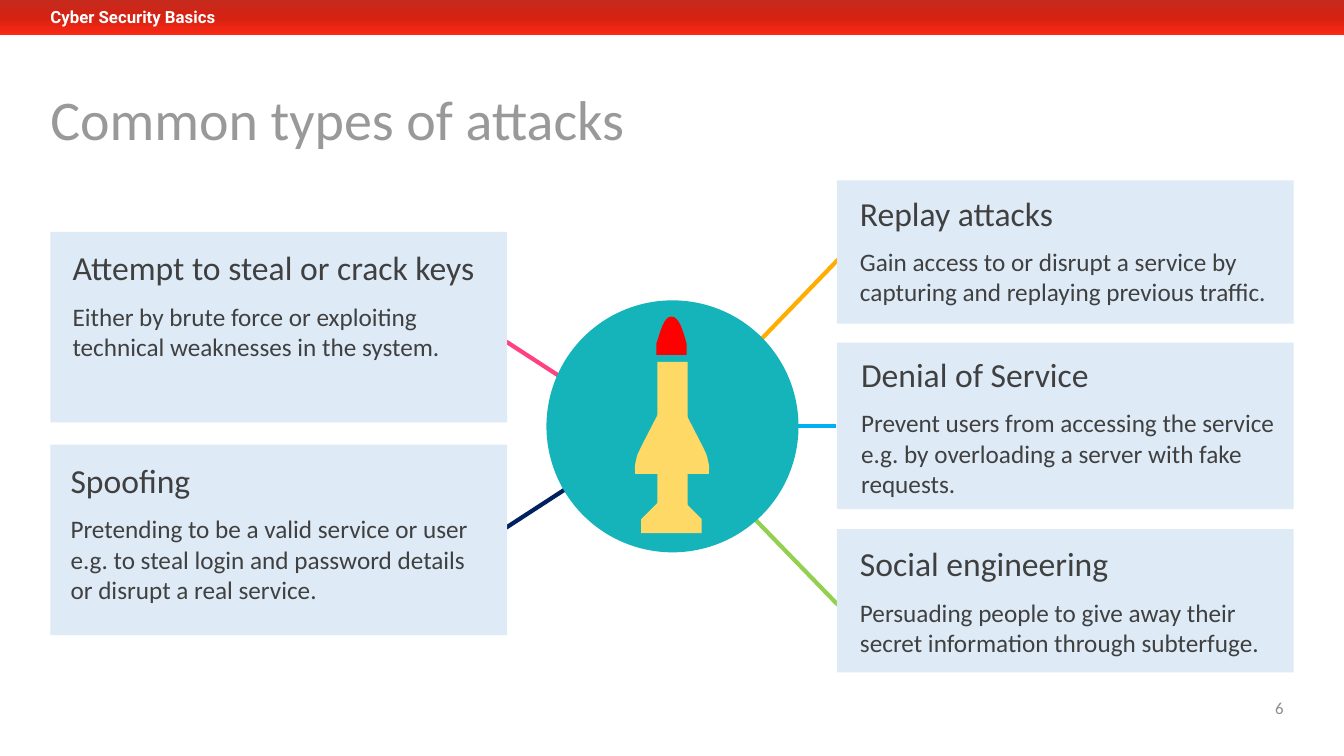
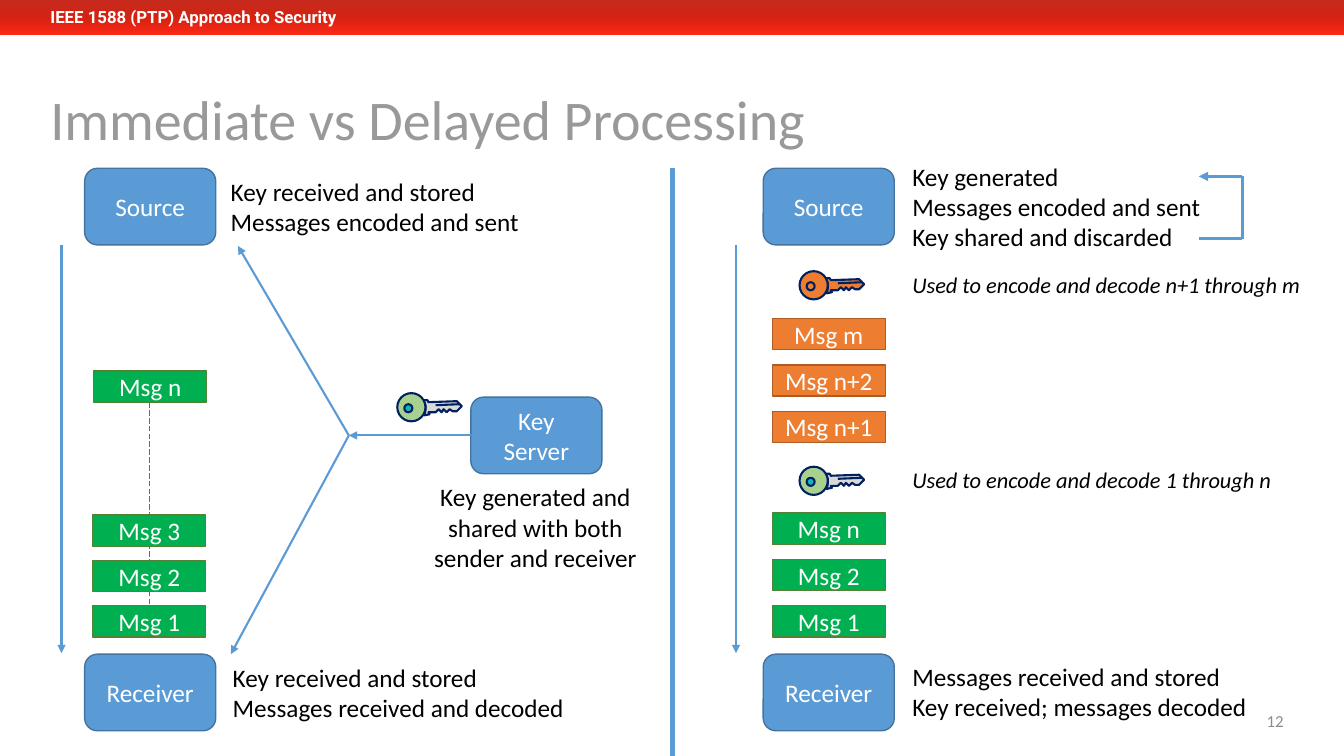
from copy import deepcopy
from dataclasses import dataclass
from typing import NamedTuple, Optional, Sequence

from lxml import etree
from pptx import Presentation
from pptx import util as u
from pptx.dml import color
from pptx.enum import dml, shapes, text
from pptx.oxml import ns

Point = tuple[float, float]


@dataclass(frozen=True)
class Theme:
    font: str = "Calibri"
    band_font: str = "Roboto"
    band: tuple = ("C52A1D", "D52212", "FD2815")
    title: str = "999999"
    number: str = "8C8C8C"
    white: str = "FFFFFF"
    black: str = "000000"
    card: str = "DEEBF7"
    card_text: str = "404040"
    teal: str = "15B4BA"
    nose: str = "FF0000"
    rocket: str = "FFD966"
    blue: str = "5B9BD5"
    blue_edge: str = "43739E"
    green: str = "00B050"
    green_edge: str = "548235"
    orange: str = "ED7D31"
    orange_edge: str = "AF5C24"
    navy: str = "002060"
    key_green: str = "A9D18E"
    key_grey: str = "D9D9D9"
    title_size: float = 40
    heading_size: float = 24
    body_size: float = 18
    note_size: float = 16
    small_size: float = 12
    heading_gap: float = 9.8


T = Theme()


class Box(NamedTuple):
    left: float
    top: float
    width: float
    height: float

    def emu(self) -> list:
        return [u.Inches(v) for v in self]


class Style(NamedTuple):
    size: float = T.body_size
    color: str = T.black
    font: str = T.font
    bold: bool = False
    italic: bool = False
    align: text.PP_ALIGN = text.PP_ALIGN.LEFT
    anchor: text.MSO_ANCHOR = text.MSO_ANCHOR.TOP
    insets: tuple = (0.1, 0.05, 0.1, 0.05)


class Card(NamedTuple):
    box: Box
    text_box: Box
    heading: str
    body: str


class Spoke(NamedTuple):
    start: Point
    end: Point
    color: str


class Message(NamedTuple):
    left: float
    top: float
    label: str
    fill: str
    edge: str


class Key(NamedTuple):
    center: Point
    bow: str
    blade: str
    eye: str


LABEL = Style(color=T.white, align=text.PP_ALIGN.CENTER, anchor=text.MSO_ANCHOR.MIDDLE)
CARD_BODY = Style(color=T.card_text, insets=(0.2, 0.05, 0.04, 0.05))
CARD_HEADING = CARD_BODY._replace(size=T.heading_size)
TITLE = Style(T.title_size, T.title, anchor=text.MSO_ANCHOR.MIDDLE, insets=(0, 0, 0, 0))
SECTION = Style(T.small_size, T.white, T.band_font, bold=True, insets=(0, 0.05, 0.1, 0.05))
NUMBER = Style(T.small_size, T.number, align=text.PP_ALIGN.RIGHT, anchor=text.MSO_ANCHOR.MIDDLE)
NOTE = Style(T.note_size, italic=True)


def rgb(value: str) -> color.RGBColor:
    return color.RGBColor.from_string(value)


def write(shape, lines: Sequence[str], *styles: Style) -> None:
    frame = shape.text_frame
    frame.text = "\n".join(lines)
    frame.word_wrap = True
    frame.vertical_anchor = styles[0].anchor
    frame.margin_left, frame.margin_top, frame.margin_right, frame.margin_bottom = (
        u.Inches(v) for v in styles[0].insets)
    for i, paragraph in enumerate(frame.paragraphs):
        style = styles[min(i, len(styles) - 1)]
        paragraph.alignment = style.align
        for run in paragraph.runs:
            font = run.font
            font.name, font.size = style.font, u.Pt(style.size)
            font.bold, font.italic = style.bold, style.italic
            font.color.rgb = rgb(style.color)


def add_text(slide, box: Box, lines: Sequence[str], *styles: Style):
    caption = slide.shapes.add_textbox(*box.emu())
    write(caption, lines, *styles)
    return caption


def paint(shape, fill: Optional[str], edge: Optional[str] = None, weight: float = 1) -> None:
    shape.shadow.inherit = False
    if fill:
        shape.fill.solid()
        shape.fill.fore_color.rgb = rgb(fill)
    else:
        shape.fill.background()
    if edge:
        shape.line.color.rgb = rgb(edge)
        shape.line.width = u.Pt(weight)
    else:
        shape.line.fill.background()


def add_block(slide, kind, box: Box, fill: str, edge: Optional[str] = None,
              weight: float = 1, label: str = ""):
    block = slide.shapes.add_shape(kind, *box.emu())
    paint(block, fill, edge, weight)
    if label:
        write(block, [label], LABEL)
    return block


def add_outline(slide, points: Sequence[Point], fill: Optional[str],
                edge: Optional[str] = None, weight: float = 1) -> None:
    corners = [(u.Inches(x), u.Inches(y)) for x, y in points]
    builder = slide.shapes.build_freeform(*corners[0])
    builder.add_line_segments(corners[1:], close=True)
    paint(builder.convert_to_shape(), fill, edge, weight)


def add_line(slide, start: Point, end: Point, stroke: str, weight: float,
             arrow: bool = False, dashed: bool = False) -> None:
    line = slide.shapes.add_connector(
        shapes.MSO_CONNECTOR.STRAIGHT, *(u.Inches(v) for v in (*start, *end)))
    line.line.color.rgb = rgb(stroke)
    line.line.width = u.Pt(weight)
    if dashed:
        line.line.dash_style = dml.MSO_LINE.LONG_DASH
    if arrow:
        etree.SubElement(line.line._get_or_add_ln(), ns.qn("a:tailEnd"), type="triangle")
    etree.SubElement(line._element.spPr, ns.qn("a:effectLst"))


def add_frame(deck, section: str, title: str, number: str, number_top: float):
    slide = deck.slides.add_slide(deck.slide_layouts[6])
    band = slide.shapes.add_shape(shapes.MSO_SHAPE.RECTANGLE, *Box(0, 0, 13.34, 0.35).emu())
    band.shadow.inherit = False
    band.line.fill.background()
    band.fill.gradient()
    band.fill.gradient_angle = 270
    stops = band._element.spPr.find(".//" + ns.qn("a:gsLst"))
    stops.insert(1, deepcopy(stops[0]))
    for i, (stop, shade) in enumerate(zip(band.fill.gradient_stops, T.band)):
        stop.position = i / 2
        stop.color.rgb = rgb(shade)
    add_text(slide, Box(0.5, 0.02, 3.92, 0.3), [section], SECTION)
    heading = add_text(slide, Box(0.5, 0.91, 9.73, 0.61), [title], TITLE)
    heading.text_frame.paragraphs[0].line_spacing = 0.9
    add_text(slide, Box(9.83, number_top, 3, 0.4), [number], NUMBER)
    return slide


def add_card(slide, card: Card) -> None:
    add_block(slide, shapes.MSO_SHAPE.RECTANGLE, card.box, T.card)
    copy = add_text(slide, card.text_box, [card.heading, card.body], CARD_HEADING, CARD_BODY)
    copy.text_frame.paragraphs[1].space_before = u.Pt(T.heading_gap)


def bezier(p0: Point, p1: Point, p2: Point, p3: Point, steps: int = 8) -> list:
    def at(t: float, a: float, b: float, c: float, d: float) -> float:
        s = 1 - t
        return s**3 * a + 3 * s * s * t * b + 3 * s * t * t * c + t**3 * d
    return [tuple(at(i / steps, *axis) for axis in zip(p0, p1, p2, p3))
            for i in range(steps + 1)]


def add_missile(slide) -> None:
    kinds = shapes.MSO_SHAPE
    add_block(slide, kinds.OVAL, Box(5.42, 2.98, 2.5, 2.5), T.teal)
    nose = [(6.81, 3.52),
            *bezier((6.81, 3.41), (6.78, 3.3), (6.74, 3.14), (6.66, 3.14)),
            *bezier((6.66, 3.14), (6.58, 3.14), (6.55, 3.3), (6.51, 3.41)),
            (6.51, 3.52)]
    add_outline(slide, nose, T.nose)
    fin = [(6.79, 4.08),
           *bezier((6.98, 4.45), (6.99, 4.48), (7.01, 4.5), (7.02, 4.56)),
           *bezier((7.02, 4.56), (7.04, 4.63), (7.03, 4.65), (7.03, 4.7)),
           (6.78, 4.7)]
    add_outline(slide, fin, T.rocket)
    add_outline(slide, [(13.33 - x, y) for x, y in fin], T.rocket)
    for kind, box in ((kinds.RECTANGLE, Box(6.52, 3.59, 0.3, 1.49)),
                      (kinds.ISOSCELES_TRIANGLE, Box(6.36, 4.85, 0.6, 0.3)),
                      (kinds.RECTANGLE, Box(6.36, 5.15, 0.6, 0.14))):
        add_block(slide, kind, box, T.rocket)


BLADE = [(0.13, 0.08), (0.18, 0.07), (0.17, 0.05), (0.24, 0.05), (0.27, 0.02), (0.3, 0.05),
         (0.32, 0.02), (0.35, 0.05), (0.38, 0.02), (0.41, 0.04), (0.45, 0.04), (0.5, -0.01),
         (0.45, -0.06), (0.17, -0.05), (0.16, -0.07), (0.12, -0.07), (0.14, -0.02), (0.14, 0.03)]


def add_key(slide, key: Key) -> None:
    x, y = key.center
    add_outline(slide, [(x + dx, y + dy) for dx, dy in BLADE], key.blade, T.navy, 1.5)
    add_line(slide, (x + 0.24, y - 0.02), (x + 0.48, y - 0.03), T.navy, 1.5)
    for dx, dy, size, fill in ((0, 0, 0.28, key.bow), (-0.03, 0.01, 0.08, key.eye)):
        add_block(slide, shapes.MSO_SHAPE.OVAL,
                  Box(x + dx - size / 2, y + dy - size / 2, size, size), fill, T.navy, 1.5)


def attacks_slide(deck) -> None:
    slide = add_frame(deck, "Cyber Security Basics", "Common types of attacks", "6", 6.82)
    for spoke in (Spoke((8.29, 4.23), (7.85, 4.23), "00B0F0"),
                  Spoke((4.76, 3.22), (6.3, 4.22), "FF4181"),
                  Spoke((4.75, 5.41), (6.29, 4.41), T.navy),
                  Spoke((8.31, 6), (6.73, 4.37), "92D050"),
                  Spoke((8.5, 2.38), (6.92, 4.02), "FFAD01")):
        add_line(slide, *spoke, 3)
    for card in (
        Card(Box(0.5, 2.3, 4.53, 1.89), Box(0.52, 2.4, 4.23, 1.25), "Attempt to steal or crack keys",
             "Either by brute force or exploiting technical weaknesses in the system."),
        Card(Box(0.5, 4.41, 4.53, 1.89), Box(0.5, 4.51, 4.2, 1.55), "Spoofing",
             "Pretending to be a valid service or user e.g. to steal login and password details "
             "or disrupt a real service."),
        Card(Box(8.3, 1.79, 4.53, 1.42), Box(8.33, 1.86, 4.5, 1.25), "Replay attacks",
             "Gain access to or disrupt a service by capturing and replaying previous traffic."),
        Card(Box(8.3, 3.4, 4.53, 1.65), Box(8.34, 3.46, 4.49, 1.55), "Denial of Service",
             "Prevent users from accessing the service e.g. by overloading a server with fake requests."),
        Card(Box(8.3, 5.25, 4.53, 1.42), Box(8.33, 5.34, 4.5, 1.25), "Social engineering",
             "Persuading people to give away their secret information through subterfuge."),
    ):
        add_card(slide, card)
    add_missile(slide)


def message_stack(left: float, bottom: float, pitch: float, labels: Sequence[str],
                  fill: str, edge: str) -> list[Message]:
    return [Message(left, bottom - i * pitch, label, fill, edge) for i, label in enumerate(labels)]


def processing_slide(deck) -> None:
    slide = add_frame(deck, "IEEE 1588 (PTP) Approach to Security",
                      "Immediate vs Delayed Processing", "12", 6.95)
    for left, top, label in ((0.84, 1.67, "Source"), (0.84, 6.49, "Receiver"), (4.67, 3.94, "Key Server"),
                             (7.57, 1.67, "Source"), (7.57, 6.49, "Receiver")):
        add_block(slide, shapes.MSO_SHAPE.ROUNDED_RECTANGLE, Box(left, top, 1.3, 0.76),
                  T.blue, T.blue_edge, label=label)

    add_line(slide, (1.48, 3.99), (1.48, 6.01), T.green_edge, 0.5, dashed=True)
    green, orange = (T.green, T.green_edge), (T.orange, T.orange_edge)
    for message in (*message_stack(0.92, 6.01, 0.45, ["Msg 1", "Msg 2", "Msg 3"], *green),
                    Message(0.93, 3.68, "Msg n", *green),
                    *message_stack(7.66, 6.01, 0.46, ["Msg 1", "Msg 2", "Msg n"], *green),
                    *message_stack(7.66, 4.08, 0.46, ["Msg n+1", "Msg n+2", "Msg m"], *orange)):
        add_block(slide, shapes.MSO_SHAPE.RECTANGLE, Box(message.left, message.top, 1.12, 0.31),
                  message.fill, message.edge, label=message.label)

    plain = Style()
    for box, lines, style in (
        (Box(2.19, 1.7, 3.3, 0.71), ["Key received and stored", "Messages encoded and sent"], plain),
        (Box(2.21, 6.52, 3.7, 0.71), ["Key received and stored", "Messages received and decoded"], plain),
        (Box(4.19, 4.73, 2.24, 1.01), ["Key generated and shared with both sender and receiver"],
         plain._replace(align=text.PP_ALIGN.CENTER)),
        (Box(8.95, 1.55, 3.7, 1.01),
         ["Key generated", "Messages encoded and sent", "Key shared and discarded"], plain),
        (Box(8.95, 6.51, 3.7, 0.71),
         ["Messages received and stored", "Key received; messages decoded"], plain),
        (Box(8.95, 2.64, 4.3, 0.37), ["Used to encode and decode n+1 through m"], NOTE),
        (Box(8.95, 4.58, 4.3, 0.37), ["Used to encode and decode 1 through n"], NOTE),
    ):
        add_text(slide, box, lines, style)

    hub = (3.46, 4.32)
    for start, end in (((0.61, 2.43), (0.61, 6.48)), ((7.3, 2.43), (7.3, 6.48)),
                       (hub, (2.36, 2.44)), (hub, (2.29, 6.49)), ((4.67, 4.32), hub)):
        add_line(slide, start, end, T.blue, 1.5, arrow=True)
    loop = [(11.89, 2.37), (12.32, 2.37), (12.32, 1.75), (11.89, 1.75)]
    for i, (start, end) in enumerate(zip(loop, loop[1:])):
        add_line(slide, start, end, T.blue, 2.25, arrow=i == 2)
    add_line(slide, (6.67, 1.67), (6.67, 7.5), T.blue, 3)

    for key in (Key((4.08, 4.04), T.key_green, T.key_grey, T.teal),
                Key((8.07, 4.77), T.key_green, T.key_grey, T.teal),
                Key((8.07, 2.83), T.orange, T.orange, T.orange)):
        add_key(slide, key)


def main() -> None:
    deck = Presentation()
    deck.slide_width, deck.slide_height = u.Inches(13.33), u.Inches(7.5)
    attacks_slide(deck)
    processing_slide(deck)
    deck.save("out.pptx")


if __name__ == "__main__":
    main()
